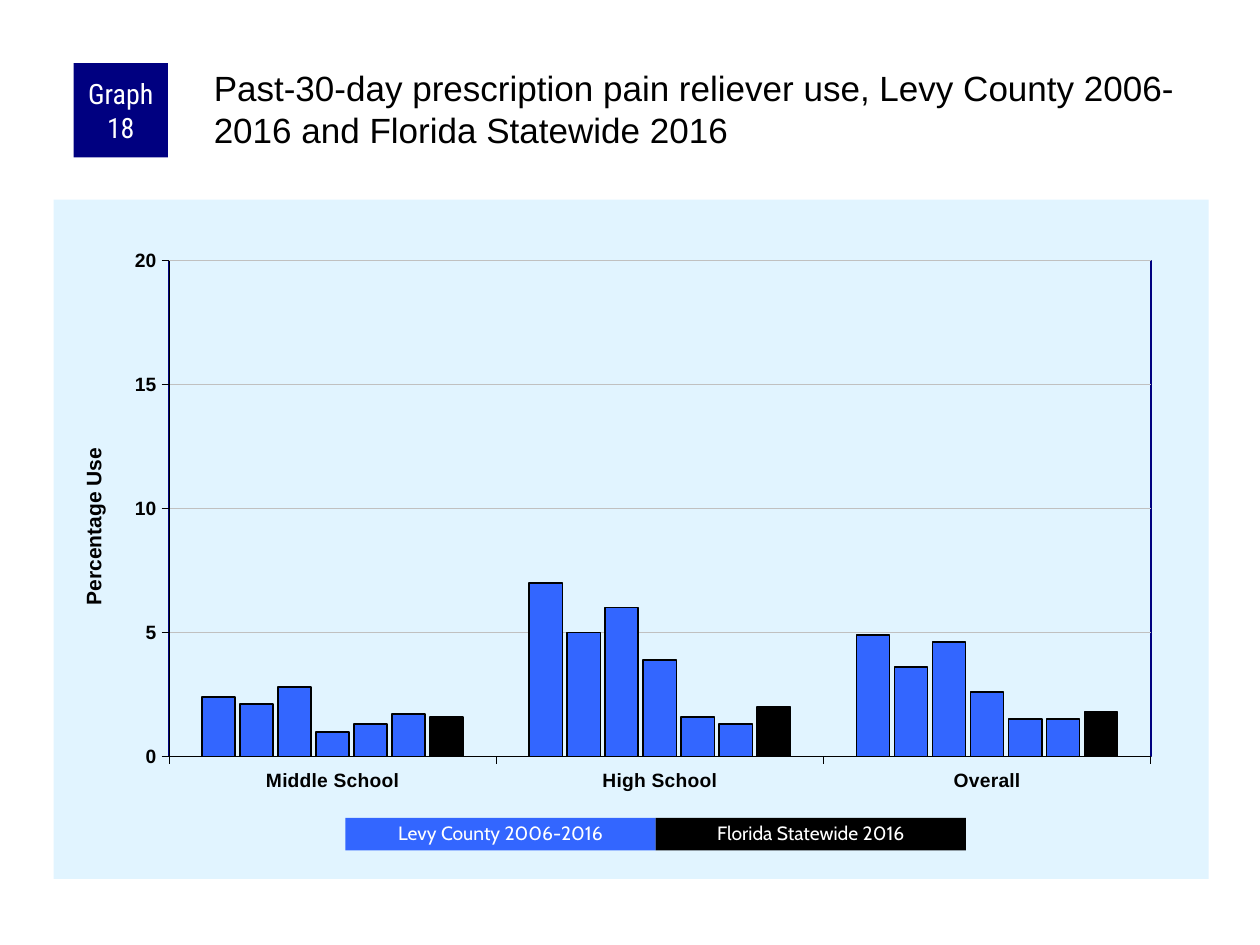
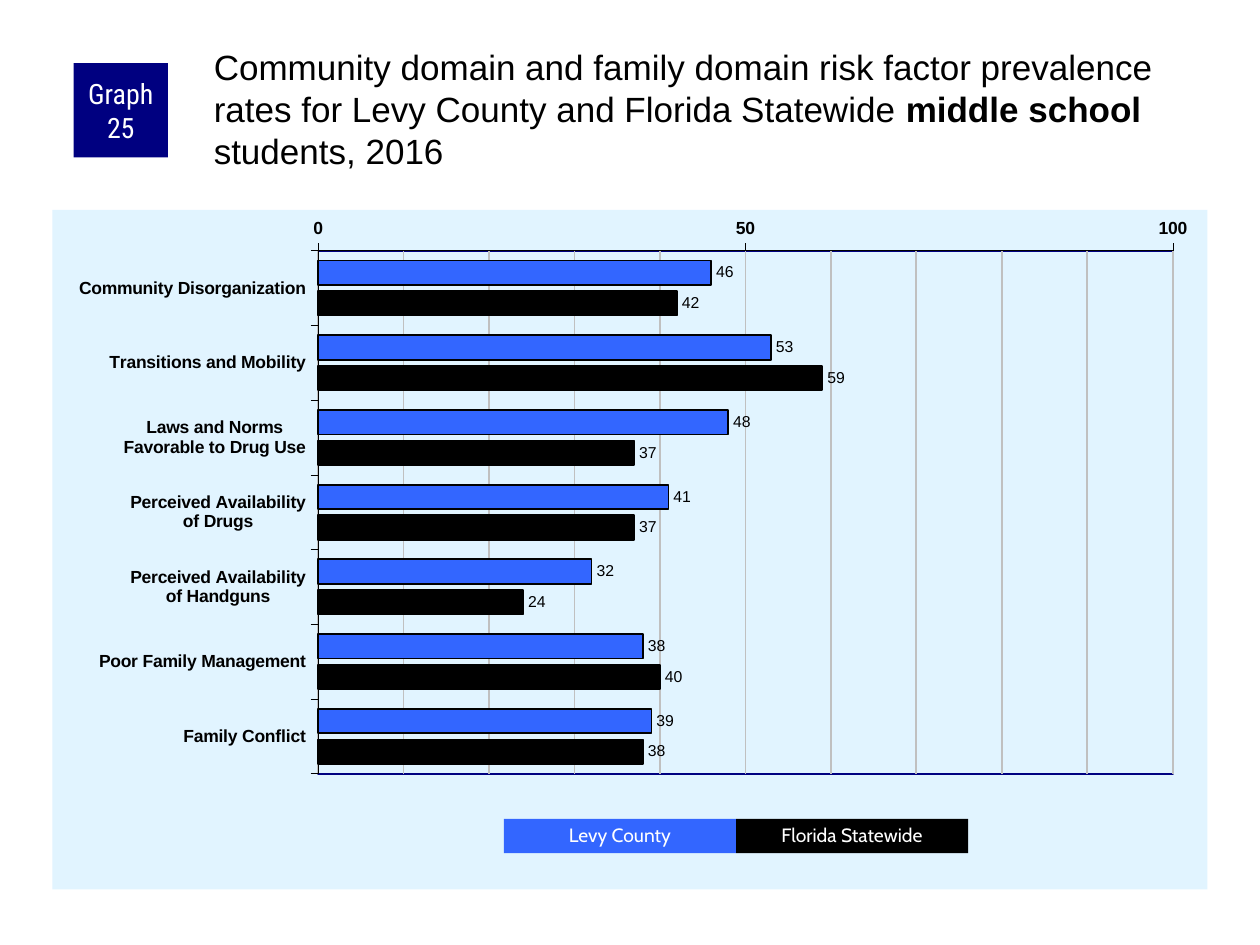
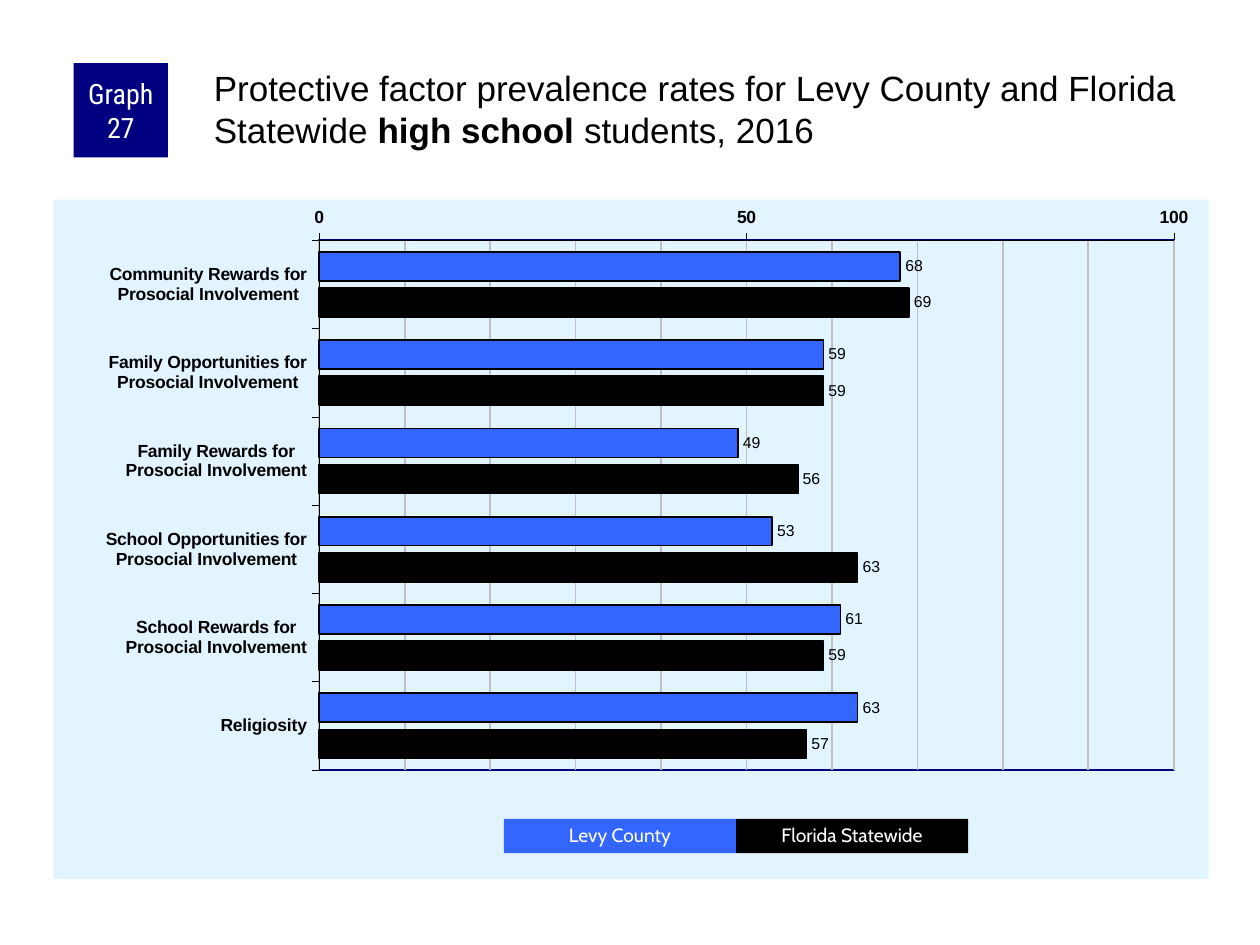
from copy import deepcopy
from dataclasses import dataclass

from lxml import etree
from pptx import Presentation
from pptx import util as u
from pptx.chart.axis import ValueAxis
from pptx.chart.chart import Chart
from pptx.chart.data import CategoryChartData
from pptx.dml.color import RGBColor
from pptx.enum import chart as charts
from pptx.enum import shapes, text
from pptx.oxml import parse_xml
from pptx.oxml.ns import nsdecls, qn
from pptx.slide import Slide

NAVY = RGBColor(0x00, 0x00, 0x80)
BLUE = RGBColor(0x33, 0x66, 0xFF)
BLACK = RGBColor(0x00, 0x00, 0x00)
WHITE = RGBColor(0xFF, 0xFF, 0xFF)
SILVER = RGBColor(0xC0, 0xC0, 0xC0)
PALE = RGBColor(0xE1, 0xF4, 0xFF)

BODY_FONT, BADGE_FONT, LEGEND_FONT = "Arial", "Roboto Condensed", "Cabin"

SLIDE_WIDTH, SLIDE_HEIGHT = u.Inches(10), u.Inches(7.5)
COLUMNS, ROWS = 120, 90
TITLE_ONLY = 5


@dataclass(frozen=True)
class Area:
    """A rectangle in columns and rows of the slide grid."""
    left: float
    top: float
    width: float
    height: float

    def lengths(self) -> tuple[int, int, int, int]:
        column, row = SLIDE_WIDTH / COLUMNS, SLIDE_HEIGHT / ROWS
        return (round(self.left * column), round(self.top * row),
                round(self.width * column), round(self.height * row))


@dataclass(frozen=True)
class Style:
    """What differs between the column chart and the bar charts."""
    kind: charts.XL_CHART_TYPE
    axis_size: float
    gap: int
    overlap: int
    top_value: int
    major_unit: int
    grid_width: float
    horizontal: bool


@dataclass(frozen=True)
class Series:
    values: tuple[float, ...]
    color: RGBColor


@dataclass(frozen=True)
class Graph:
    number: int
    title: tuple[tuple[str, bool], ...]  # wording, bold
    title_row: float
    style: Style
    panel: Area
    plot: tuple[float, float, float, float]  # shares of the panel
    categories: tuple[str, ...]
    series: tuple[Series, ...]
    legend: tuple[str, str]
    legend_area: Area


COLUMN_STYLE = Style(charts.XL_CHART_TYPE.COLUMN_CLUSTERED, 11, 200, -15, 20, 5, 0.25, False)
BAR_STYLE = Style(charts.XL_CHART_TYPE.BAR_CLUSTERED, 10, 80, -25, 100, 50, 1, True)

BADGE = Area(7, 6, 9, 9)
PANEL = Area(5.1, 19, 110, 64.7)
LOWER_PANEL = Area(5, 20, 110, 64.7)
WIDE_LEGEND = Area(32.9, 77.9, 59.1, 3.1)
LEGEND = Area(48, 78, 44.2, 3.25)
COUNTIES = ("Levy County", "Florida Statewide")

GRAPHS = (
    Graph(
        18,
        (("Past-30-day prescription pain reliever use, Levy County 2006-2016 "
          "and Florida Statewide 2016", False),),
        6, COLUMN_STYLE, PANEL, (0.1, 0.09, 0.85, 0.73),
        ("Middle School", "High School", "Overall"),
        (Series((2.4, 7, 4.9), BLUE), Series((2.1, 5, 3.6), BLUE),
         Series((2.8, 6, 4.6), BLUE), Series((1, 3.9, 2.6), BLUE),
         Series((1.3, 1.6, 1.5), BLUE), Series((1.7, 1.3, 1.5), BLUE),
         Series((1.6, 2, 1.8), BLACK)),
        ("Levy County 2006-2016", "Florida Statewide 2016"), WIDE_LEGEND,
    ),
    Graph(
        25,
        (("Community domain and family domain risk factor prevalence rates "
          "for Levy County and Florida Statewide ", False),
         ("middle school", True), (" students, 2016", False)),
        4, BAR_STYLE, LOWER_PANEL, (0.23, 0.06, 0.74, 0.77),
        ("Community Disorganization", "Transitions and Mobility",
         "Laws and Norms\nFavorable to Drug Use",
         "Perceived Availability\nof Drugs",
         "Perceived Availability\nof Handguns",
         "Poor Family Management", "Family Conflict"),
        (Series((46, 53, 48, 41, 32, 38, 39), BLUE),
         Series((42, 59, 37, 37, 24, 40, 38), BLACK)),
        COUNTIES, LEGEND,
    ),
    Graph(
        27,
        (("Protective factor prevalence rates for Levy County and Florida Statewide ", False),
         ("high school ", True), ("students, 2016", False)),
        6, BAR_STYLE, PANEL, (0.23, 0.06, 0.74, 0.78),
        tuple(f"{name} for\nProsocial Involvement" for name in (
            "Community Rewards", "Family Opportunities", "Family Rewards",
            "School Opportunities", "School Rewards")) + ("Religiosity",),
        (Series((68, 59, 49, 53, 61, 63), BLUE),
         Series((69, 59, 56, 63, 59, 57), BLACK)),
        COUNTIES, LEGEND,
    ),
)


def set_font(font, name: str, size: float, color: RGBColor, bold: bool = False) -> None:
    font.name, font.size, font.bold = name, u.Pt(size), bold
    font.color.rgb = color


def set_line(line, color: RGBColor, width: float) -> None:
    line.color.rgb = color
    line.width = u.Pt(width)


def add_title(page: Slide, graph: Graph) -> None:
    box = page.shapes.title
    box.left, box.top, box.width, box.height = Area(20, graph.title_row, 95, 10).lengths()
    frame = box.text_frame
    frame.word_wrap = True
    frame.auto_size = text.MSO_AUTO_SIZE.NONE
    frame.vertical_anchor = text.MSO_ANCHOR.TOP
    frame.margin_left = frame.margin_top = u.Inches(0.03)
    frame.margin_right = frame.margin_bottom = 0
    para = frame.paragraphs[0]
    para.alignment = text.PP_ALIGN.LEFT
    for wording, bold in graph.title:
        span = para.add_run()
        span.text = wording
        set_font(span.font, BODY_FONT, 20, BLACK, bold)


def add_label(page: Slide, area: Area, wording: str, fill: RGBColor,
              font: str, size: float, spacing: float) -> None:
    """Add a filled rectangle with centred white text."""
    box = page.shapes.add_shape(shapes.MSO_SHAPE.RECTANGLE, *area.lengths())
    box.shadow.inherit = False
    box.fill.solid()
    box.fill.fore_color.rgb = fill
    box.line.fill.background()
    frame = box.text_frame
    frame.word_wrap = True
    frame.vertical_anchor = text.MSO_ANCHOR.MIDDLE
    frame.margin_left = frame.margin_right = u.Inches(0.05)
    frame.margin_top = frame.margin_bottom = 0
    frame.text = wording
    para = frame.paragraphs[0]
    para.alignment = text.PP_ALIGN.CENTER
    para.line_spacing = spacing
    set_font(para.runs[0].font, font, size, WHITE)


def add_legend(page: Slide, graph: Graph) -> None:
    area = graph.legend_area
    half = area.width / 2
    for index, (name, color) in enumerate(zip(graph.legend, (BLUE, BLACK))):
        part = Area(area.left + index * half, area.top, half, area.height)
        add_label(page, part, name, color, LEGEND_FONT, 11, 0.9)


def layout_xml(x: float, y: float, width: float = 0, height: float = 0) -> etree._Element:
    """Place a chart part by shares of the chart; a plot also has a size."""
    parts = [("xMode", "edge"), ("yMode", "edge"), ("x", x), ("y", y)]
    if width:
        parts = [("layoutTarget", "inner"), *parts, ("w", width), ("h", height)]
    inner = "".join(f'<c:{tag} val="{value}"/>' for tag, value in parts)
    return parse_xml(f'<c:layout {nsdecls("c")}><c:manualLayout>{inner}'
                     "</c:manualLayout></c:layout>")


def paint_xml(fill: str, line: str) -> etree._Element:
    return parse_xml(f'<c:spPr {nsdecls("c", "a")}>{fill}<a:ln w="{u.Pt(1)}">{line}</a:ln></c:spPr>')


def solid(color: RGBColor) -> str:
    return f'<a:solidFill><a:srgbClr val="{color}"/></a:solidFill>'


def paint_areas(chart: Chart, plot: tuple[float, float, float, float]) -> None:
    """Fill the chart, and place and outline its plot."""
    root = chart.element.find(qn("c:chart"))
    root.addnext(paint_xml(solid(PALE), "<a:noFill/>"))
    plot_area = root.find(qn("c:plotArea"))
    for old in plot_area.findall(qn("c:layout")):
        plot_area.remove(old)
    plot_area.insert(0, layout_xml(*plot))
    plot_area.append(paint_xml("<a:noFill/>", solid(NAVY)))


def add_axis_title(axis: ValueAxis, wording: str) -> None:
    frame = axis.axis_title.text_frame
    frame.text = wording
    set_font(frame.paragraphs[0].runs[0].font, BODY_FONT, 12, BLACK, True)
    title = axis.axis_title.element
    for old in title.findall(qn("c:layout")):
        title.remove(old)
    title.find(qn("c:tx")).addnext(layout_xml(0.02, 0.36))


def add_minor_gridlines(chart: Chart, unit: int) -> None:
    """Draw minor gridlines in the style of the major ones."""
    chart.value_axis.minor_unit = unit
    chart.value_axis.has_minor_gridlines = True
    major = next(chart.element.iter(qn("c:majorGridlines")))
    minor = next(chart.element.iter(qn("c:minorGridlines")))
    minor.append(deepcopy(major.find(qn("c:spPr"))))


def format_axes(chart: Chart, style: Style) -> None:
    values, names = chart.value_axis, chart.category_axis
    for axis in (values, names):
        set_font(axis.tick_labels.font, BODY_FONT, style.axis_size, BLACK, True)
        set_line(axis.format.line, BLACK, 0.25)
        axis.major_tick_mark = charts.XL_TICK_MARK.OUTSIDE
        axis.minor_tick_mark = charts.XL_TICK_MARK.NONE
    values.minimum_scale, values.maximum_scale = 0, style.top_value
    values.major_unit = style.major_unit
    values.has_major_gridlines = True
    set_line(values.major_gridlines.format.line, SILVER, style.grid_width)
    if style.horizontal:
        names.reverse_order = True
        names.crosses = charts.XL_AXIS_CROSSES.MAXIMUM
        add_minor_gridlines(chart, 10)
    else:
        add_axis_title(values, "Percentage Use")


def add_graph(page: Slide, graph: Graph) -> None:
    style = graph.style
    data = CategoryChartData()
    data.categories = graph.categories
    for number, series in enumerate(graph.series, 1):
        data.add_series(f"Series {number}", series.values)
    chart = page.shapes.add_chart(style.kind, *graph.panel.lengths(), data).chart
    chart.has_title = chart.has_legend = False
    set_font(chart.font, BODY_FONT, 10, BLACK)
    paint_areas(chart, graph.plot)
    format_axes(chart, style)
    bars = chart.plots[0]
    bars.gap_width, bars.overlap = style.gap, style.overlap
    bars.vary_by_categories = False
    for drawn, series in zip(bars.series, graph.series):
        drawn.format.fill.solid()
        drawn.format.fill.fore_color.rgb = series.color
        set_line(drawn.format.line, BLACK, 1)
        if style.horizontal:
            drawn.data_labels.show_value = True
            drawn.data_labels.position = charts.XL_LABEL_POSITION.OUTSIDE_END
            set_font(drawn.data_labels.font, BODY_FONT, 9, BLACK)


def main() -> None:
    deck = Presentation()
    deck.slide_width, deck.slide_height = SLIDE_WIDTH, SLIDE_HEIGHT
    for graph in GRAPHS:
        page = deck.slides.add_slide(deck.slide_layouts[TITLE_ONLY])
        add_title(page, graph)
        add_graph(page, graph)
        add_label(page, BADGE, f"Graph {graph.number}", NAVY, BADGE_FONT, 16, 1)
        add_legend(page, graph)
    deck.save("out.pptx")


if __name__ == "__main__":
    main()
